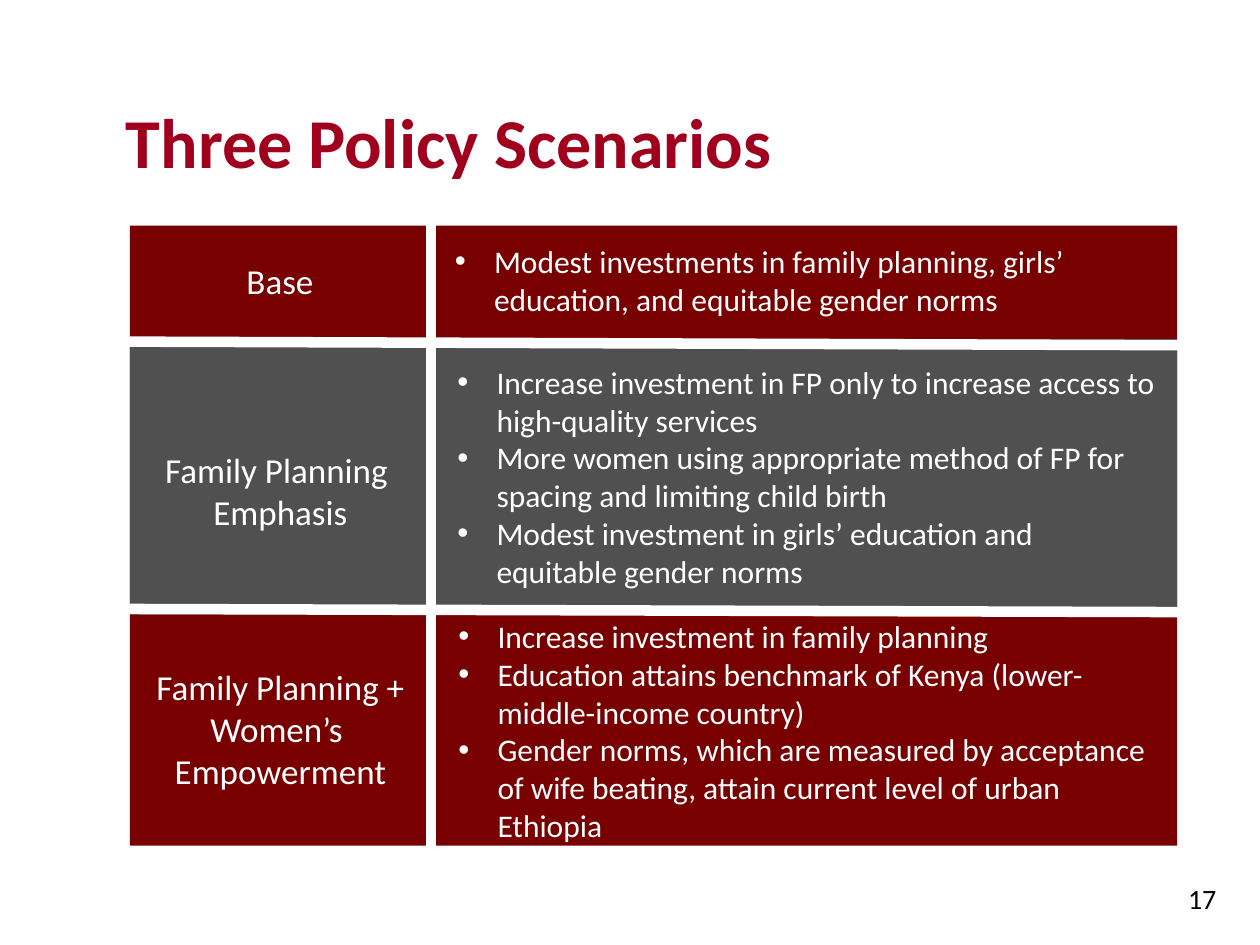
"""Build the slide that sets out three policy scenarios."""
import pptx
import pptx.dml.color
import pptx.enum.shapes
import pptx.enum.text
import pptx.util
from lxml import etree
from pptx.oxml.ns import qn

Cm = pptx.util.Cm
Pt = pptx.util.Pt
RGBColor = pptx.dml.color.RGBColor
ALIGN = pptx.enum.text.PP_ALIGN
ANCHOR = pptx.enum.text.MSO_ANCHOR

MAROON = RGBColor(0x78, 0x00, 0x00)
GREY = RGBColor(0x50, 0x50, 0x50)
CRIMSON = RGBColor(0xA0, 0x00, 0x1E)
WHITE = RGBColor(0xFF, 0xFF, 0xFF)
BLACK = RGBColor(0x00, 0x00, 0x00)

deck = pptx.Presentation()
deck.slide_width, deck.slide_height = Cm(25.4), Cm(19.05)
page = deck.slides.add_slide(deck.slide_layouts[6])


def add_text(place, lines, size, color, align=ALIGN.LEFT, anchor=ANCHOR.MIDDLE, bullets=False):
    box = page.shapes.add_textbox(*map(Cm, place))
    frame = box.text_frame
    frame.word_wrap = True
    frame.vertical_anchor = anchor
    frame.text = "\n".join(lines)
    for para in frame.paragraphs:
        para.alignment = align
        if bullets:
            properties = para._p.get_or_add_pPr()
            properties.set("marL", str(Cm(0.79)))
            properties.set("indent", str(-Cm(0.79)))
            etree.SubElement(properties, qn("a:buFont"), typeface="Arial")
            etree.SubElement(properties, qn("a:buChar"), char="•")
        para.font.name = "Calibri"
        para.font.size = Pt(size)
        para.font.color.rgb = color
    return frame


for top, height, color in [(4.55, 12.5, MAROON), (6.83, 5.56, GREY)]:
    band = page.shapes.add_shape(
        pptx.enum.shapes.MSO_SHAPE.RECTANGLE, Cm(2.62), Cm(top), Cm(21.11), Cm(height))
    band.shadow.inherit = False
    band.fill.solid()
    band.fill.fore_color.rgb = color
    band.line.fill.background()

title = add_text((2.54, 1.98, 21.59, 3.73), ["Three Policy Scenarios"], 40, CRIMSON,
                 anchor=ANCHOR.TOP)
title.margin_left = title.margin_right = title.margin_top = title.margin_bottom = 0
title.paragraphs[0].font.bold = True

scenarios = [
    ((2.62, 4.47, 6.05, 2.36), ["Base"],
     (8.92, 4.45, 14.63, 2.39),
     ["Modest investments in family planning, girls’ education, and equitable gender norms"]),
    ((2.62, 7.19, 6.07, 5.38), ["Family Planning ", "Emphasis"],
     (8.97, 6.91, 14.61, 5.38),
     ["Increase investment in FP only to increase access to high-quality services",
      "More women using appropriate method of FP for spacing and limiting child birth",
      "Modest investment in girls’ education and equitable gender norms"]),
    ((2.62, 12.42, 6.07, 4.55), ["Family Planning +", "Women’s ", "Empowerment"],
     (8.99, 12.5, 14.58, 4.45),
     ["Increase investment in family planning",
      "Education attains benchmark of Kenya (lower-middle-income country)",
      "Gender norms, which are measured by acceptance of wife beating, "
      "attain current level of urban Ethiopia"]),
]
for name_place, name, details_place, details in scenarios:
    add_text(name_place, name, 20, WHITE, ALIGN.CENTER)
    add_text(details_place, details, 18, WHITE, bullets=True)

add_text((21.82, 17.65, 2.95, 0.69), ["17"], 16, BLACK, ALIGN.RIGHT, ANCHOR.TOP)

dividers = [(0.56, 6.88, 24.16, 6.96), (8.69, 18.14, 8.69, 3.91), (0.61, 12.27, 24.21, 12.34)]
for ends in dividers:
    divider = page.shapes.add_connector(
        pptx.enum.shapes.MSO_CONNECTOR.STRAIGHT, *map(Cm, ends))
    divider.line.color.rgb = WHITE
    divider.line.width = Pt(6)
    etree.SubElement(divider._element.spPr, qn("a:effectLst"))

deck.save("out.pptx")
